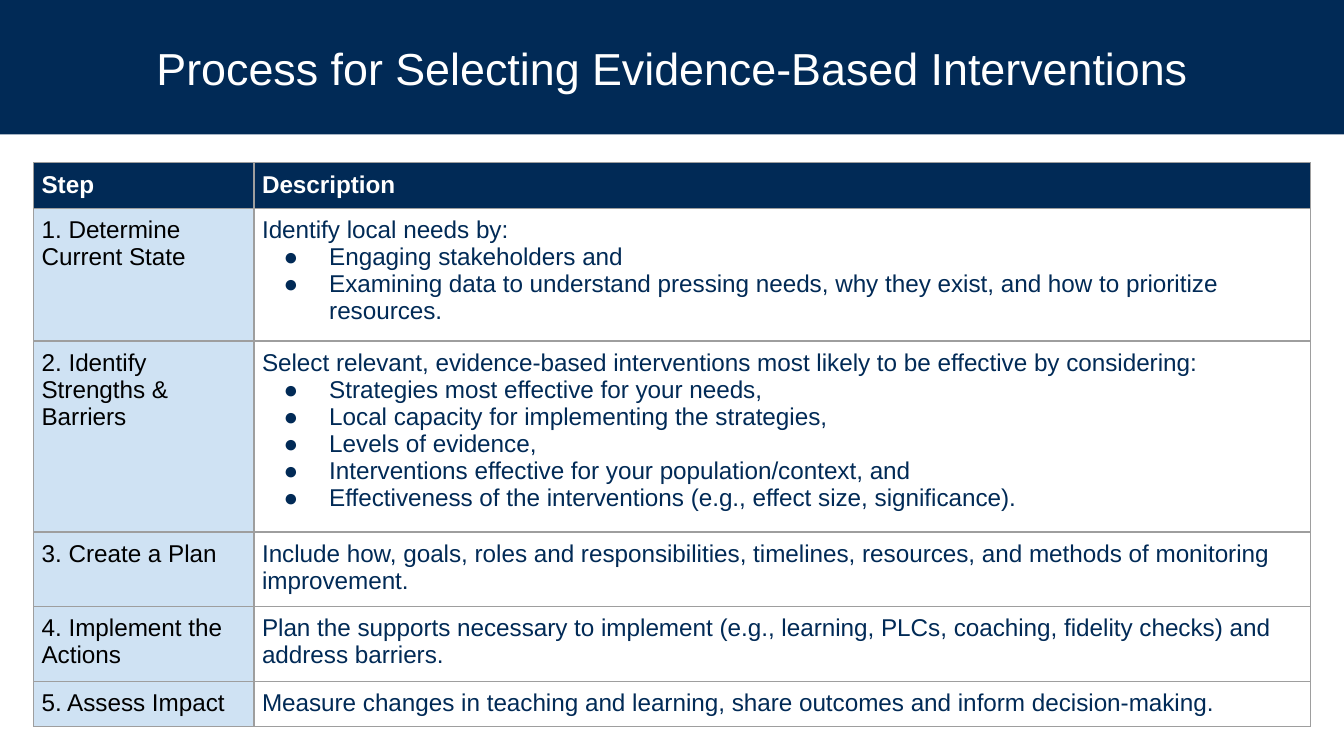
"""Builds a slide with a table of five steps for selecting interventions."""
import lxml.etree
import pptx
import pptx.dml.color
import pptx.enum.shapes
import pptx.enum.text
import pptx.oxml.ns
import pptx.util

PX = 4572
NAVY, PALE, WHITE, BLACK, GREY = "012A56", "CFE2F3", "FFFFFF", "000000", "9E9E9E"
MIDDLE = pptx.enum.text.MSO_ANCHOR.MIDDLE
TOP = pptx.enum.text.MSO_ANCHOR.TOP

STEPS = [
    ("1. Determine Current State", "Identify local needs by:", [
        "Engaging stakeholders and",
        "Examining data to understand pressing needs, why they exist, "
        "and how to prioritize resources."]),
    ("2. Identify Strengths & Barriers",
     "Select relevant, evidence-based interventions most likely to be effective by considering:", [
         "Strategies most effective for your needs,",
         "Local capacity for implementing the strategies,",
         "Levels of evidence,",
         "Interventions effective for your population/context, and",
         "Effectiveness of the interventions (e.g., effect size, significance)."]),
    ("3. Create a Plan",
     "Include how, goals, roles and responsibilities, timelines, resources, "
     "and methods of monitoring improvement.", []),
    ("4. Implement the Actions",
     "Plan the supports necessary to implement (e.g., learning, PLCs, coaching, "
     "fidelity checks) and address barriers.", []),
    ("5. Assess Impact",
     "Measure changes in teaching and learning, share outcomes and inform decision-making.", []),
]


def color(value):
    """Return the colour for a hex string."""
    return pptx.dml.color.RGBColor.from_string(value)


def add_xml(parent, tag, **attributes):
    """Append a DrawingML element to a parent."""
    return lxml.etree.SubElement(parent, pptx.oxml.ns.qn(tag), attributes)


class SlideBuilder:
    """Holds the style and the current slide."""

    font = "Arial"
    body_size = 13
    cell_inset = 12

    def __init__(self, slide):
        """Keep the slide to draw on."""
        self.slide = slide

    def style(self, paragraph, size, ink, bold=False):
        """Format every run of a paragraph."""
        for run in paragraph.runs:
            run.font.name = self.font
            run.font.size = pptx.util.Pt(size)
            run.font.bold = bold
            run.font.color.rgb = color(ink)

    def band(self, left, top, width, height, fill):
        """Draw a plain filled rectangle."""
        band = self.slide.shapes.add_shape(
            pptx.enum.shapes.MSO_SHAPE.RECTANGLE,
            left * PX, top * PX, width * PX, height * PX)
        band.shadow.inherit = False
        band.fill.solid()
        band.fill.fore_color.rgb = color(fill)
        band.line.fill.background()

    def title(self, left, top, width, height, wording):
        """Write the centred slide title."""
        frame = self.slide.shapes.add_textbox(
            left * PX, top * PX, width * PX, height * PX).text_frame
        frame.word_wrap = True
        frame.vertical_anchor = MIDDLE
        frame.margin_left = frame.margin_right = 14 * PX
        frame.margin_top = frame.margin_bottom = 8 * PX
        frame.text = wording
        frame.paragraphs[0].alignment = pptx.enum.text.PP_ALIGN.CENTER
        self.style(frame.paragraphs[0], 24, WHITE)

    def table(self, left, top, columns, rows):
        """Add an unbanded table with the given column widths and row heights."""
        table = self.slide.shapes.add_table(
            len(rows), len(columns), left * PX, top * PX,
            sum(columns) * PX, sum(rows) * PX).table
        table.first_row = table.horz_banding = False
        for column, width in zip(table.columns, columns):
            column.width = width * PX
        for row, height in zip(table.rows, rows):
            row.height = height * PX
        return table

    def cell(self, cell, lines, ink, fill=None, bold=False, anchor=TOP):
        """Fill a cell with a first line and bullets below it."""
        cell.margin_left = cell.margin_right = self.cell_inset * PX
        cell.margin_top = cell.margin_bottom = self.cell_inset * PX
        cell.vertical_anchor = anchor
        self.borders(cell)
        if fill:
            cell.fill.solid()
            cell.fill.fore_color.rgb = color(fill)
        else:
            cell.fill.background()
        cell.text_frame.text = "\n".join(lines)
        for index, paragraph in enumerate(cell.text_frame.paragraphs):
            self.style(paragraph, self.body_size, ink, bold)
            if index:
                self.bullet(paragraph, ink)

    def borders(self, cell):
        """Draw a thin grey line on each side of a cell."""
        properties = cell._tc.get_or_add_tcPr()
        for side in ("a:lnL", "a:lnR", "a:lnT", "a:lnB"):
            line = add_xml(properties, side, w=str(pptx.util.Pt(0.75)))
            add_xml(add_xml(line, "a:solidFill"), "a:srgbClr", val=GREY)

    def bullet(self, paragraph, ink):
        """Give a paragraph a hanging round bullet."""
        properties = paragraph._p.get_or_add_pPr()
        properties.set("marL", str(100 * PX))
        properties.set("indent", str(-68 * PX))
        add_xml(add_xml(properties, "a:buClr"), "a:srgbClr", val=ink)
        add_xml(properties, "a:buFont", typeface=self.font)
        add_xml(properties, "a:buChar", char="●")


def main():
    """Build and save the slide."""
    deck = pptx.Presentation()
    deck.slide_width, deck.slide_height = 2000 * PX, 1125 * PX
    builder = SlideBuilder(deck.slides.add_slide(deck.slide_layouts[6]))
    builder.band(0, 0, 2000, 200, NAVY)
    builder.title(50, 50, 1900, 100, "Process for Selecting Evidence-Based Interventions")

    process = builder.table(50, 242, [328, 1572], [68, 197, 284, 111, 111, 67])
    for column, heading in enumerate(("Step", "Description")):
        builder.cell(process.cell(0, column), [heading], WHITE, NAVY, True, MIDDLE)
    for row, (step, description, points) in enumerate(STEPS, start=1):
        builder.cell(process.cell(row, 0), [step], BLACK, PALE)
        builder.cell(process.cell(row, 1), [description, *points], NAVY)
    deck.save("out.pptx")


if __name__ == "__main__":
    main()
